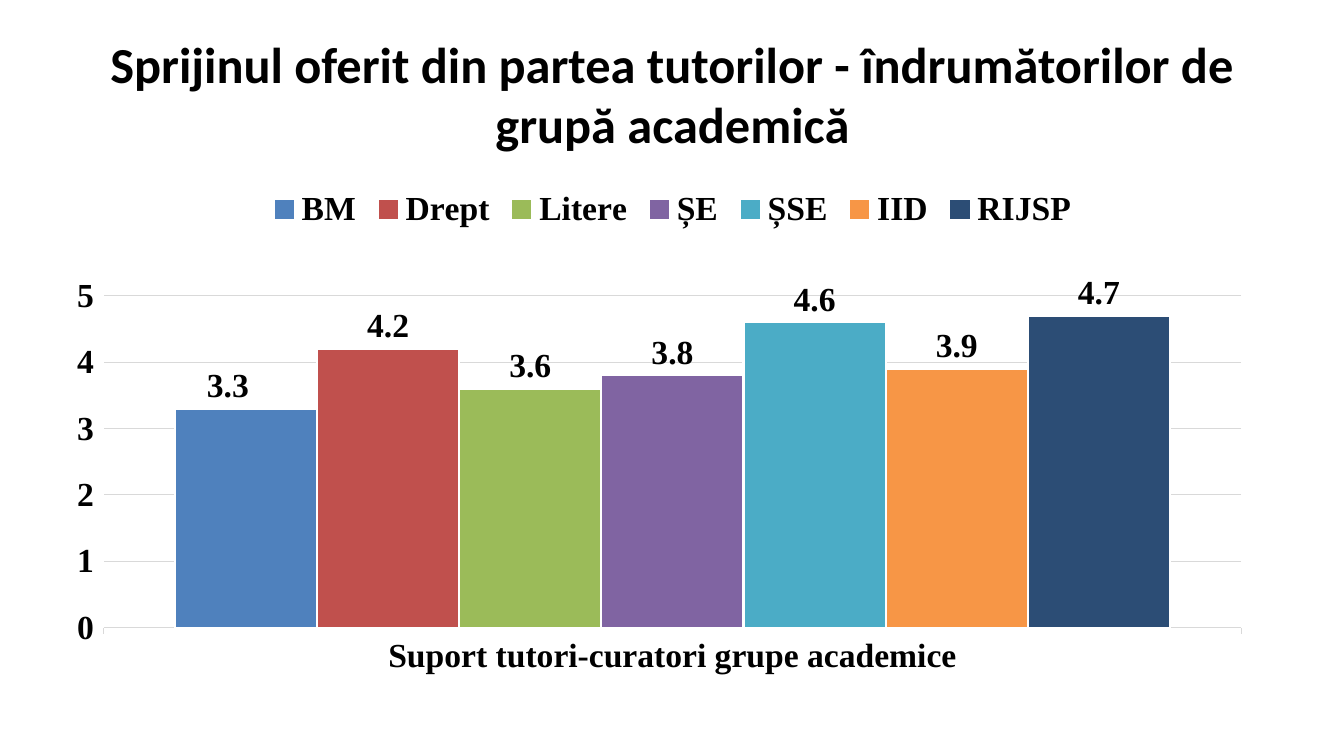
from dataclasses import dataclass

from lxml import etree
from pptx import Presentation
from pptx.chart.data import CategoryChartData
from pptx.dml.color import RGBColor
from pptx.enum import chart as ch, text
from pptx.oxml.ns import qn
from pptx.util import Inches, Pt


@dataclass(frozen=True)
class Theme:
    text: str = "000000"
    grid: str = "D9D9D9"
    outline: str = "FFFFFF"
    title_font: str = "Calibri"
    chart_font: str = "Times New Roman"
    title_size: int = 36
    chart_size: int = 24


@dataclass(frozen=True)
class Faculty:
    name: str
    score: float
    color: str


THEME = Theme()
TITLE = "Sprijinul oferit din partea tutorilor - îndrumătorilor de grupă academică"
CATEGORY = "Suport tutori-curatori grupe academice"
FACULTIES = [
    Faculty("BM", 3.3, "4F81BD"),
    Faculty("Drept", 4.2, "C0504D"),
    Faculty("Litere", 3.6, "9BBB59"),
    Faculty("ȘE", 3.8, "8064A2"),
    Faculty("ȘSE", 4.6, "4BACC6"),
    Faculty("IID", 3.9, "F79646"),
    Faculty("RIJSP", 4.7, "2C4D75"),
]


def style_font(font, name: str, size: int) -> None:
    font.name = name
    font.size = Pt(size)
    font.bold = True
    font.color.rgb = RGBColor.from_string(THEME.text)


def style_line(line, color: str, width: float) -> None:
    line.color.rgb = RGBColor.from_string(color)
    line.width = Pt(width)


def manual_layout(**settings) -> etree._Element:
    """Return a c:layout element; settings must follow schema order."""
    layout = etree.Element(qn("c:layout"))
    manual = etree.SubElement(layout, qn("c:manualLayout"))
    for tag, value in settings.items():
        etree.SubElement(manual, qn(f"c:{tag}")).set("val", str(value))
    return layout


def add_title(slide) -> None:
    title = slide.shapes.title
    title.left, title.top = Inches(0.67), Inches(0.3)
    title.width, title.height = Inches(12), Inches(1.25)
    tf = title.text_frame
    tf.text = TITLE
    tf.word_wrap = True
    tf.vertical_anchor = text.MSO_ANCHOR.MIDDLE
    p = tf.paragraphs[0]
    p.alignment = text.PP_ALIGN.CENTER
    style_font(p.runs[0].font, THEME.title_font, THEME.title_size)


def style_axes(chart) -> None:
    for axis in (chart.category_axis, chart.value_axis):
        axis.major_tick_mark = ch.XL_TICK_MARK.OUTSIDE
        axis.minor_tick_mark = ch.XL_TICK_MARK.NONE
        style_font(axis.tick_labels.font, THEME.chart_font, THEME.chart_size)
    style_line(chart.category_axis.format.line, THEME.grid, 0.75)

    scores = chart.value_axis
    scores.minimum_scale, scores.maximum_scale, scores.major_unit = 0, 5, 1
    scores.format.line.fill.background()
    style_line(scores.major_gridlines.format.line, THEME.grid, 0.75)


def style_series(series, faculty: Faculty) -> None:
    series.format.fill.solid()
    series.format.fill.fore_color.rgb = RGBColor.from_string(faculty.color)
    style_line(series.format.line, THEME.outline, 1.5)
    labels = series.data_labels
    labels.show_value = True
    labels.position = ch.XL_LABEL_POSITION.OUTSIDE_END
    style_font(labels.font, THEME.chart_font, THEME.chart_size)


def shift_label(series, dx: float) -> None:
    """Move the first label sideways by a fraction of the chart width."""
    label = series.points[0].data_label
    style_font(label.font, THEME.chart_font, THEME.chart_size)
    label.position = ch.XL_LABEL_POSITION.OUTSIDE_END
    d_lbl = series.data_labels._element.find(qn("c:dLbl"))
    d_lbl.insert(1, manual_layout(x=dx, y=0))


def add_score_chart(slide) -> None:
    data = CategoryChartData()
    data.categories = [CATEGORY]
    for faculty in FACULTIES:
        data.add_series(faculty.name, [faculty.score])
    chart = slide.shapes.add_chart(
        ch.XL_CHART_TYPE.COLUMN_CLUSTERED,
        Inches(0.67), Inches(1.75), Inches(12), Inches(4.95), data,
    ).chart
    chart.has_title = False
    style_font(chart.font, THEME.chart_font, THEME.chart_size)
    chart.has_legend = True
    chart.legend.position = ch.XL_LEGEND_POSITION.TOP
    chart.legend.include_in_layout = False
    style_font(chart.legend.font, THEME.chart_font, THEME.chart_size)
    style_axes(chart)

    plot = chart.plots[0]
    plot.gap_width = 100
    plot.overlap = 0
    plot.vary_by_categories = False
    for series, faculty in zip(plot.series, FACULTIES):
        style_series(series, faculty)
    shift_label(plot.series[0], -0.015)

    plot_area = chart._chartSpace.chart.plotArea
    for layout in plot_area.findall(qn("c:layout")):
        plot_area.remove(layout)
    plot_area.insert(0, manual_layout(
        layoutTarget="inner", xMode="edge", yMode="edge",
        x=0.03, y=0.24, w=0.94, h=0.667,
    ))


def main() -> None:
    prs = Presentation()
    prs.slide_width, prs.slide_height = Inches(13.33), Inches(7.5)
    slide = prs.slides.add_slide(prs.slide_layouts.get_by_name("Title Only"))
    add_title(slide)
    add_score_chart(slide)
    prs.save("out.pptx")


if __name__ == "__main__":
    main()
